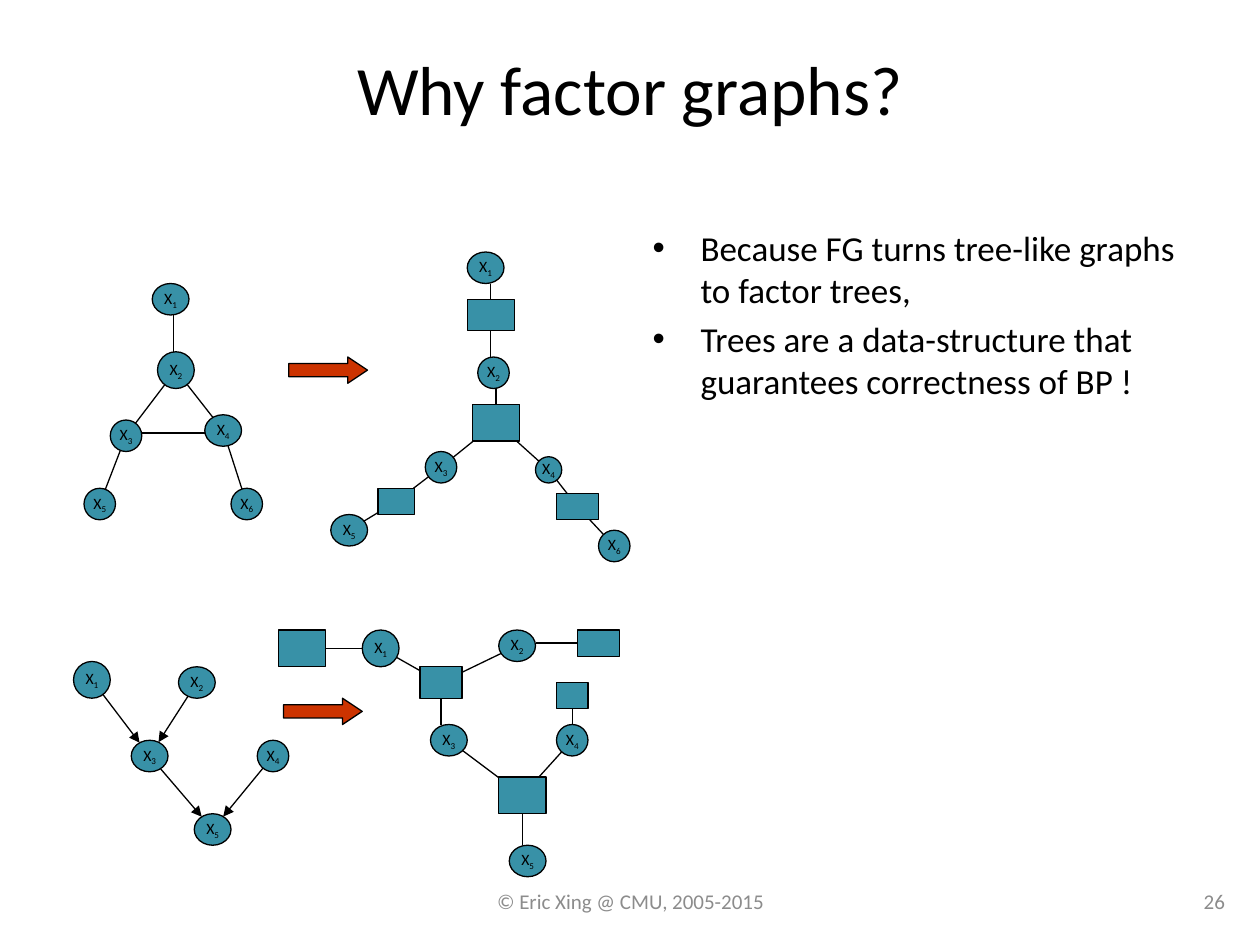
from itertools import pairwise
from math import hypot

from lxml import etree
from pptx import Presentation
from pptx.dml.color import RGBColor
from pptx.enum.shapes import MSO_CONNECTOR, MSO_SHAPE
from pptx.enum.text import MSO_ANCHOR, PP_ALIGN
from pptx.oxml.ns import qn
from pptx.util import Inches, Pt

FONT = "Calibri"
BLACK, GREY, TEAL, RED = "000000", "8C8C8C", "3891A7", "CC3300"
UNIT = Inches(1) / 24  # the diagrams sit on a grid of 24 columns to the inch

TITLE = "Why factor graphs?"
REASONS = [
    "Because FG turns tree-like graphs to factor trees,",
    "Trees are a data-structure that guarantees correctness of BP !",
]
FOOTER = "© Eric Xing @ CMU, 2005-2015"
PAGE = "26"

# Sizes in grid units
SMALL, ROUND, WIDE, BIG = (5, 5), (6, 6), (7, 6), (7, 7)
CHIP, SLAB, BAR, BLOCK, BOX, PANEL = (6, 5), (7, 5), (8, 5), (8, 6), (9, 6), (9, 7)
ARROW = (15, 5)

# Parts: name -> left, top, size. X1, X2 ... are variables, letters are factors.
# Paths: chains of parts joined by edges.
GRAPHS = [
    {  # undirected graph
        "parts": {"X1": (29, 54, WIDE), "X2": (30, 67, BIG), "X3": (21, 80, ROUND),
                  "X4": (39, 79, WIDE), "X5": (16, 93, ROUND), "X6": (44, 93, ROUND)},
        "paths": ["X1-X2-X3-X5", "X2-X4-X6", "X3-X4"],
    },
    {  # its factor tree
        "parts": {"X1": (89, 48, WIDE), "A": (89, 57, BOX), "X2": (91, 68, ROUND),
                  "B": (90, 77, PANEL), "X3": (81, 86, ROUND), "X4": (102, 87, SMALL),
                  "C": (72, 93, SLAB), "X5": (63, 98, WIDE),
                  "D": (106, 94, BAR), "X6": (114, 101, ROUND)},
        "paths": ["X1-A-X2-B-X3-C-X5", "B-X4-D-X6"],
    },
    {  # directed graph
        "parts": {"X1": (14, 126, BIG), "X2": (34, 127, WIDE), "X3": (25, 141, WIDE),
                  "X5": (37, 155, WIDE), "X4": (49, 141, ROUND)},
        "paths": ["X1-X3-X5", "X2-X3", "X4-X5"],
        "directed": True,
    },
    {  # its factor tree
        "parts": {"X1": (69, 120, BIG), "X2": (95, 120, WIDE), "X3": (82, 138, WIDE),
                  "X5": (97, 161, WIDE), "X4": (106, 138, ROUND),
                  "A": (53, 120, PANEL), "B": (110, 120, BAR), "C": (80, 127, BLOCK),
                  "D": (95, 148, PANEL), "E": (106, 130, CHIP)},
        "paths": ["A-X1-C-X2-B", "C-X3-D-X5", "E-X4-D"],
    },
]
BLOCK_ARROWS = [(55, 68, ARROW), (54, 133, ARROW)]


def rgb(color):
    return RGBColor.from_string(color)


def on_grid(*cells):
    return [round(cell * UNIT) for cell in cells]


def place(holder, left, top, width, height):
    holder.left, holder.top = Inches(left), Inches(top)
    holder.width, holder.height = Inches(width), Inches(height)


def write(paragraph, text, size, color=BLACK, align=None, subscript=False):
    run = paragraph.add_run()
    run.text = text
    run.font.size, run.font.name = Pt(size), FONT
    run.font.color.rgb = rgb(color)
    if align is not None:
        paragraph.alignment = align
    if subscript:
        run.font._element.set("baseline", "-25000")


def add_outlined(slide, preset, part, fill):
    left, top, size = part
    shape = slide.shapes.add_shape(preset, *on_grid(left, top, *size))
    shape.shadow.inherit = False
    shape.fill.solid()
    shape.fill.fore_color.rgb = rgb(fill)
    shape.line.color.rgb = rgb(BLACK)
    shape.line.width = Pt(0.75)
    return shape


def add_variable(slide, name, part):
    shape = add_outlined(slide, MSO_SHAPE.OVAL, part, TEAL)
    frame = shape.text_frame
    frame.margin_left = frame.margin_right = frame.margin_top = frame.margin_bottom = 0
    frame.word_wrap = False
    frame.vertical_anchor = MSO_ANCHOR.MIDDLE
    label = frame.paragraphs[0]
    write(label, name[0], 9, align=PP_ALIGN.CENTER)
    write(label, name[1:], 9, subscript=True)
    return shape


def is_variable(name):
    return name.startswith("X")


def center(part):
    left, top, (width, height) = part
    return left + width / 2, top + height / 2


def border_point(name, part, dx, dy):
    """Where a ray from the part's centre along (dx, dy) leaves its outline."""
    x, y = center(part)
    across, down = (2 * step / side for step, side in zip((dx, dy), part[2]))
    reach = hypot(across, down) if is_variable(name) else max(abs(across), abs(down))
    return x + dx / reach, y + dy / reach


def edge_ends(start, end, parts):
    """Both ends of an edge; nearly aligned parts get an upright or level edge."""
    middles = [center(parts[name]) for name in (start, end)]
    delta = [b - a for a, b in zip(*middles)]
    delta = [0 if abs(step) < 2 else step for step in delta]
    points = [list(border_point(start, parts[start], *delta)),
              list(border_point(end, parts[end], *(-step for step in delta)))]
    for axis, step in enumerate(delta):
        if step == 0:
            anchors = [middle[axis] for name, middle in zip((start, end), middles)
                       if not is_variable(name)]
            anchors = anchors or [middle[axis] for middle in middles]
            points[0][axis] = points[1][axis] = sum(anchors) / len(anchors)
    return points


def middle_site(part, point):
    """Connection site of the rectangle's side whose middle is the point, if any."""
    x, y = center(part)
    width, height = part[2]
    sides = [(x, y - height / 2), (x - width / 2, y),
             (x, y + height / 2), (x + width / 2, y)]
    return sides.index(tuple(point)) if tuple(point) in sides else None


def add_edge(slide, start, end, parts, shapes, directed):
    ends = edge_ends(start, end, parts)
    edge = slide.shapes.add_connector(MSO_CONNECTOR.STRAIGHT, *on_grid(*ends[0], *ends[1]))
    edge.line.color.rgb = rgb(BLACK)
    edge.line.width = Pt(0.75)
    if directed:
        etree.SubElement(edge.line._get_or_add_ln(), qn("a:tailEnd"), type="triangle")
    etree.SubElement(edge._element.spPr, qn("a:effectLst"))
    for name, point, join in zip((start, end), ends, (edge.begin_connect, edge.end_connect)):
        site = middle_site(parts[name], point)
        if not is_variable(name) and site is not None:
            join(shapes[name], site)


def add_graph(slide, parts, paths, directed=False):
    shapes = {}
    for name, part in parts.items():
        shapes[name] = (add_variable(slide, name, part) if is_variable(name)
                        else add_outlined(slide, MSO_SHAPE.RECTANGLE, part, TEAL))
    for path in paths:
        for start, end in pairwise(path.split("-")):
            add_edge(slide, start, end, parts, shapes, directed)


def add_footer(slide, text, left, width, align):
    footer = slide.shapes.add_textbox(0, 0, 0, 0)
    place(footer, left, 6.95, width, 0.4)
    footer.text_frame.word_wrap = True
    footer.text_frame.vertical_anchor = MSO_ANCHOR.MIDDLE
    write(footer.text_frame.paragraphs[0], text, 12, color=GREY, align=align)


deck = Presentation()
deck.slide_width, deck.slide_height = Inches(10), Inches(7.5)
slide = deck.slides.add_slide(deck.slide_layouts[1])
title, body = slide.placeholders
place(title, 0.5, 0.3, 9, 0.79)
title.text_frame.vertical_anchor = MSO_ANCHOR.MIDDLE
write(title.text_frame.paragraphs[0], TITLE, 39.6, align=PP_ALIGN.CENTER)
place(body, 5.08, 1.75, 4.42, 4.82)
for number, reason in enumerate(REASONS):
    frame = body.text_frame
    paragraph = frame.add_paragraph() if number else frame.paragraphs[0]
    write(paragraph, reason, 20)
    properties = paragraph._p.get_or_add_pPr()
    properties.set("marL", str(Inches(0.38)))
    properties.set("indent", str(-Inches(0.38)))
add_footer(slide, FOOTER, 3.42, 3.17, PP_ALIGN.CENTER)
add_footer(slide, PAGE, 8.87, 0.95, PP_ALIGN.RIGHT)
for graph in GRAPHS:
    add_graph(slide, **graph)
for part in BLOCK_ARROWS:
    arrow = add_outlined(slide, MSO_SHAPE.RIGHT_ARROW, part, RED)
    arrow.adjustments[0], arrow.adjustments[1] = 0.5, 0.75
deck.save("out.pptx")
